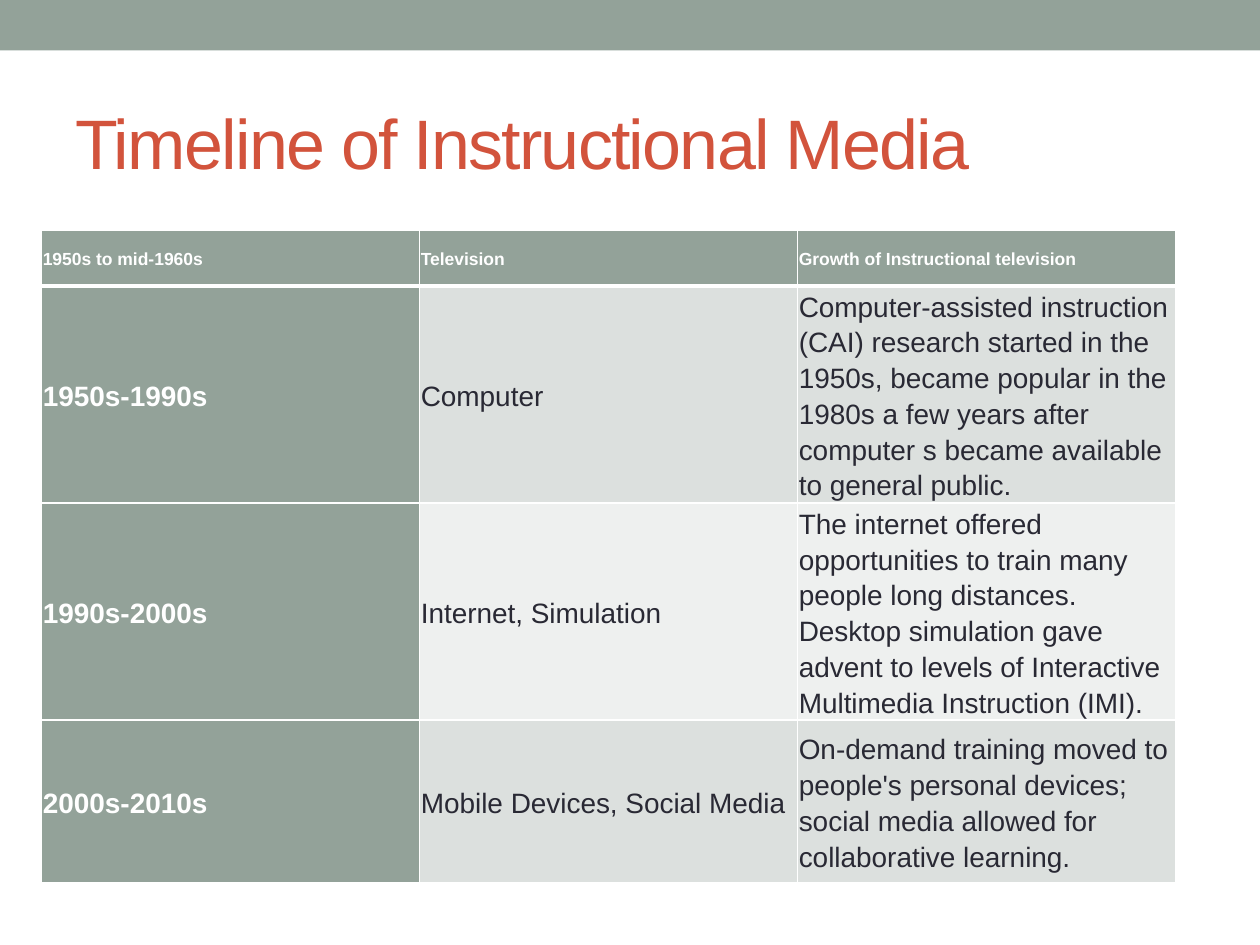
from dataclasses import dataclass

from lxml.etree import SubElement
from pptx import Presentation
from pptx.dml.color import RGBColor
from pptx.enum.shapes import MSO_SHAPE
from pptx.enum.text import MSO_ANCHOR, PP_ALIGN
from pptx.oxml.ns import qn
from pptx.util import Inches, Pt


@dataclass(frozen=True)
class Theme:
    """Colours, font and type sizes of the slide."""
    font: str = "Arial"
    sage: str = "93A299"
    red: str = "D2533C"
    ink: str = "292934"
    white: str = "FFFFFF"
    bands: tuple = ("DCE0DE", "EEF0EF")
    title_size: int = 40
    header_size: int = 10
    body_size: int = 16


THEME = Theme()
ROW_HEIGHTS = (0.44, 1.72, 1.72, 1.29)
TIMELINE = (
    ("1950s to mid-1960s", "Television", "Growth of Instructional television"),
    ("1950s-1990s", "Computer",
     "Computer-assisted instruction (CAI) research started in the 1950s, became popular "
     "in the 1980s a few years after computer s became available to general public."),
    ("1990s-2000s", "Internet, Simulation",
     "The internet offered opportunities to train many people long distances. Desktop "
     "simulation gave advent to levels of Interactive Multimedia Instruction (IMI)."),
    ("2000s-2010s", "Mobile Devices, Social Media",
     "On-demand training moved to people's personal devices; social media allowed for "
     "collaborative learning."),
)


def add_run(paragraph, text, size, color, bold=False):
    """Add one formatted run to a paragraph."""
    run = paragraph.add_run()
    run.text = text
    run.font.name = THEME.font
    run.font.size = Pt(size)
    run.font.bold = bold
    run.font.color.rgb = RGBColor.from_string(color)
    return run


def add_top_band(slide, left, top, width, height):
    """Draw the plain band along the top edge."""
    band = slide.shapes.add_shape(MSO_SHAPE.RECTANGLE, left, top, width, height)
    band.shadow.inherit = False
    band.fill.solid()
    band.fill.fore_color.rgb = RGBColor.from_string(THEME.sage)
    band.line.fill.background()


def place_title(slide, left, top, width, height):
    """Move the title placeholder and fill it."""
    title = slide.shapes.title
    title.left, title.top, title.width, title.height = left, top, width, height
    title.text_frame.vertical_anchor = MSO_ANCHOR.MIDDLE
    paragraph = title.text_frame.paragraphs[0]
    paragraph.alignment = PP_ALIGN.LEFT
    run = add_run(paragraph, "Timeline of Instructional Media", THEME.title_size, THEME.red)
    run.font._element.set("spc", "-100")


def set_borders(cell, bottom_width):
    """Give a cell white borders, with its own bottom width."""
    properties = cell._tc.get_or_add_tcPr()
    for side, width in (("lnL", 1), ("lnR", 1), ("lnT", 1), ("lnB", bottom_width)):
        line = SubElement(properties, qn(f"a:{side}"), w=str(Pt(width)))
        fill = SubElement(line, qn("a:solidFill"))
        SubElement(fill, qn("a:srgbClr"), val=THEME.white)


def format_cell(cell, text, row, column):
    """Style and fill one cell according to its place in the table."""
    is_header = row == 0
    is_label = is_header or column == 0
    set_borders(cell, 3 if is_header else 1)
    cell.fill.solid()
    color = THEME.sage if is_label else THEME.bands[(row - 1) % 2]
    cell.fill.fore_color.rgb = RGBColor.from_string(color)
    cell.vertical_anchor = MSO_ANCHOR.MIDDLE
    cell.margin_left = cell.margin_right = Inches(0.01)
    cell.margin_top = cell.margin_bottom = Inches(0.01)
    paragraph = cell.text_frame.paragraphs[0]
    paragraph.line_spacing = 1.15
    size = THEME.header_size if is_header else THEME.body_size
    add_run(paragraph, text, size, THEME.white if is_label else THEME.ink, is_label)


def add_timeline(slide, left, top, width, height):
    """Add the timeline table with equal columns."""
    frame = slide.shapes.add_table(len(TIMELINE), len(TIMELINE[0]), left, top, width, height)
    table = frame.table
    for row, (texts, row_height) in enumerate(zip(TIMELINE, ROW_HEIGHTS)):
        table.rows[row].height = Inches(row_height)
        for column, text in enumerate(texts):
            format_cell(table.cell(row, column), text, row, column)


def main():
    """Build and save the presentation."""
    presentation = Presentation()
    presentation.slide_width = Inches(10)
    presentation.slide_height = Inches(7.5)
    slide = presentation.slides.add_slide(presentation.slide_layouts[5])
    add_top_band(slide, 0, 0, presentation.slide_width, Inches(0.4))
    place_title(slide, Inches(0.5), Inches(0.58), Inches(9), Inches(1.08))
    add_timeline(slide, Inches(0.33), Inches(1.83), Inches(9), Inches(sum(ROW_HEIGHTS)))
    presentation.save("out.pptx")


if __name__ == "__main__":
    main()
